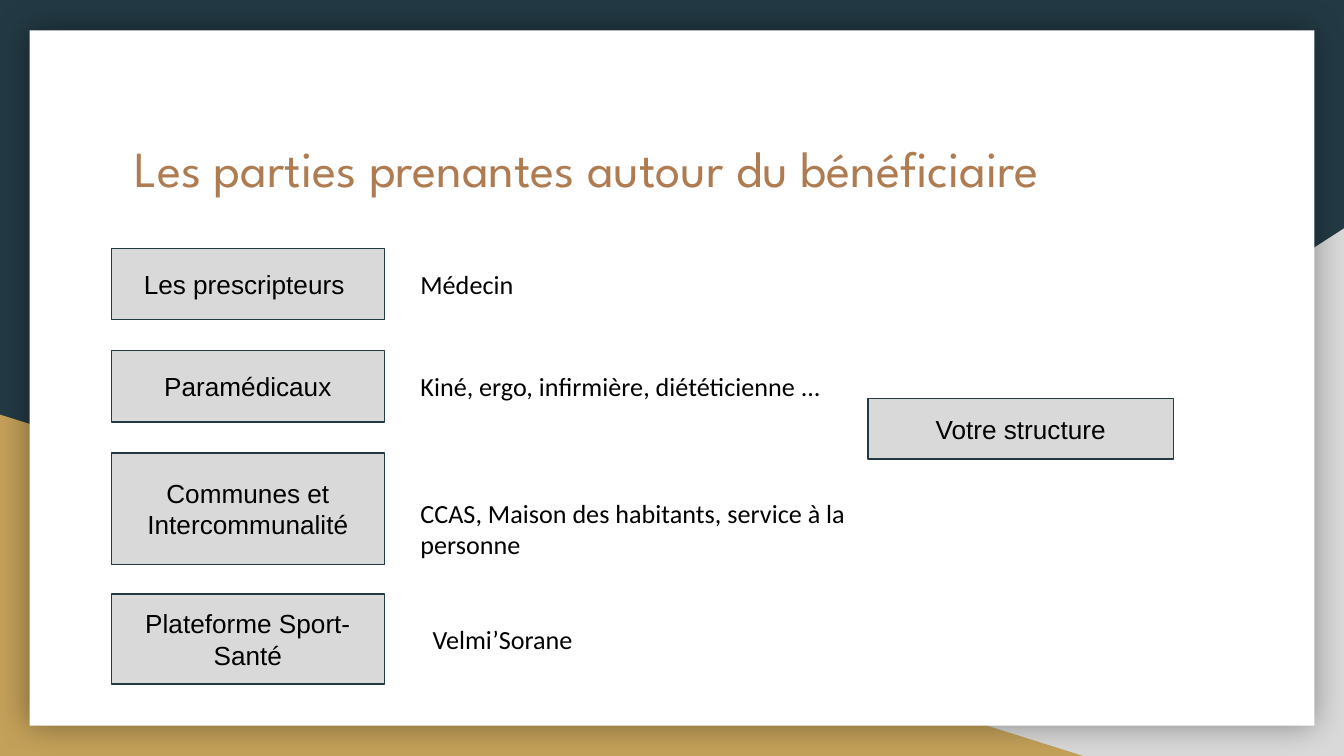
from lxml.etree import SubElement
from pptx import Presentation
from pptx.dml.color import RGBColor
from pptx.enum.shapes import MSO_SHAPE
from pptx.enum.text import MSO_ANCHOR, PP_ALIGN
from pptx.oxml.ns import qn
from pptx.util import Emu, Pt

PX = 4572
NAVY = RGBColor(0x23, 0x3A, 0x44)
GOLD = RGBColor(0xC4, 0xA1, 0x5A)
GREY = RGBColor(0xD9, 0xD9, 0xD9)
COPPER = RGBColor(0xAF, 0x7B, 0x51)
WHITE = RGBColor(0xFF, 0xFF, 0xFF)
BLACK = RGBColor(0x00, 0x00, 0x00)

FRAME = {"word_wrap": True}
FRAME.update({f"margin_{side}": Emu(20 * PX) for side in ("left", "top", "right", "bottom")})
TITLE_FONT = {"name": "League Spartan", "size": Pt(27)}
BOX_FONT = {"name": "Arial", "size": Pt(14)}
DETAIL_FONT = {"name": "Calibri", "size": Pt(14)}

deck = Presentation()
deck.slide_width, deck.slide_height = Emu(2000 * PX), Emu(1125 * PX)
slide = deck.slides.add_slide(deck.slide_layouts[6])
slide.background.fill.solid()
slide.background.fill.fore_color.rgb = NAVY


def add_panel(preset, bounds, color):
    panel = slide.shapes.add_shape(preset, *[Emu(n * PX) for n in bounds])
    panel.shadow.inherit = False
    panel.fill.solid()
    panel.fill.fore_color.rgb = color
    panel.line.fill.background()
    return panel


def write(holder, text, font, color, anchor=MSO_ANCHOR.TOP, align=PP_ALIGN.LEFT):
    frame = holder.text_frame
    for key, value in {**FRAME, "vertical_anchor": anchor}.items():
        setattr(frame, key, value)
    paragraph = frame.paragraphs[0]
    paragraph.alignment = align
    run = paragraph.add_run()
    run.text = text
    for key, value in font.items():
        setattr(run.font, key, value)
    run.font.color.rgb = color


grey_corner = add_panel(MSO_SHAPE.RIGHT_TRIANGLE, (784, 340, 1216, 785), GREY)
grey_corner._element.spPr.xfrm.set("flipH", "1")
add_panel(MSO_SHAPE.RIGHT_TRIANGLE, (0, 617, 1612, 508), GOLD)

page = add_panel(MSO_SHAPE.RECTANGLE, (44, 45, 1912, 1035), WHITE)
effects = page._element.spPr.find(qn("a:effectLst"))
glow = SubElement(effects, qn("a:outerShdw"), blurRad=str(Pt(18)), dist="0", dir="0",
                  algn="ctr", rotWithShape="0")
glow_color = SubElement(glow, qn("a:srgbClr"), val=str(BLACK))
SubElement(glow_color, qn("a:alpha"), val="40000")

stakeholders = [
    ("Les prescripteurs ", (166, 370, 406, 106)),
    ("Paramédicaux", (166, 522, 406, 106)),
    ("Communes et Intercommunalité", (166, 674, 406, 166)),
    ("Plateforme Sport-Santé", (166, 884, 406, 134)),
    ("Votre structure", (1292, 593, 454, 90)),
]
for stakeholder, bounds in stakeholders:
    box = add_panel(MSO_SHAPE.RECTANGLE, bounds, GREY)
    box.line.color.rgb = NAVY
    box.line.width = Pt(0.75)
    write(box, stakeholder, BOX_FONT, BLACK, MSO_ANCHOR.MIDDLE, PP_ALIGN.CENTER)

labels = [
    ("Les parties prenantes autour du bénéficiaire", (180, 184, 1642, 208), TITLE_FONT, COPPER),
    ("Médecin", (606, 380, 234, 88), DETAIL_FONT, BLACK),
    ("Kiné, ergo, infirmière, diététicienne ...", (606, 532, 810, 88), DETAIL_FONT, BLACK),
    ("CCAS, Maison des habitants, service à la personne", (606, 720, 696, 134), DETAIL_FONT, BLACK),
    ("Velmi’Sorane", (624, 908, 514, 88), DETAIL_FONT, BLACK),
]
for label, bounds, font, color in labels:
    write(slide.shapes.add_textbox(*[Emu(n * PX) for n in bounds]), label, font, color)

deck.save("out.pptx")
